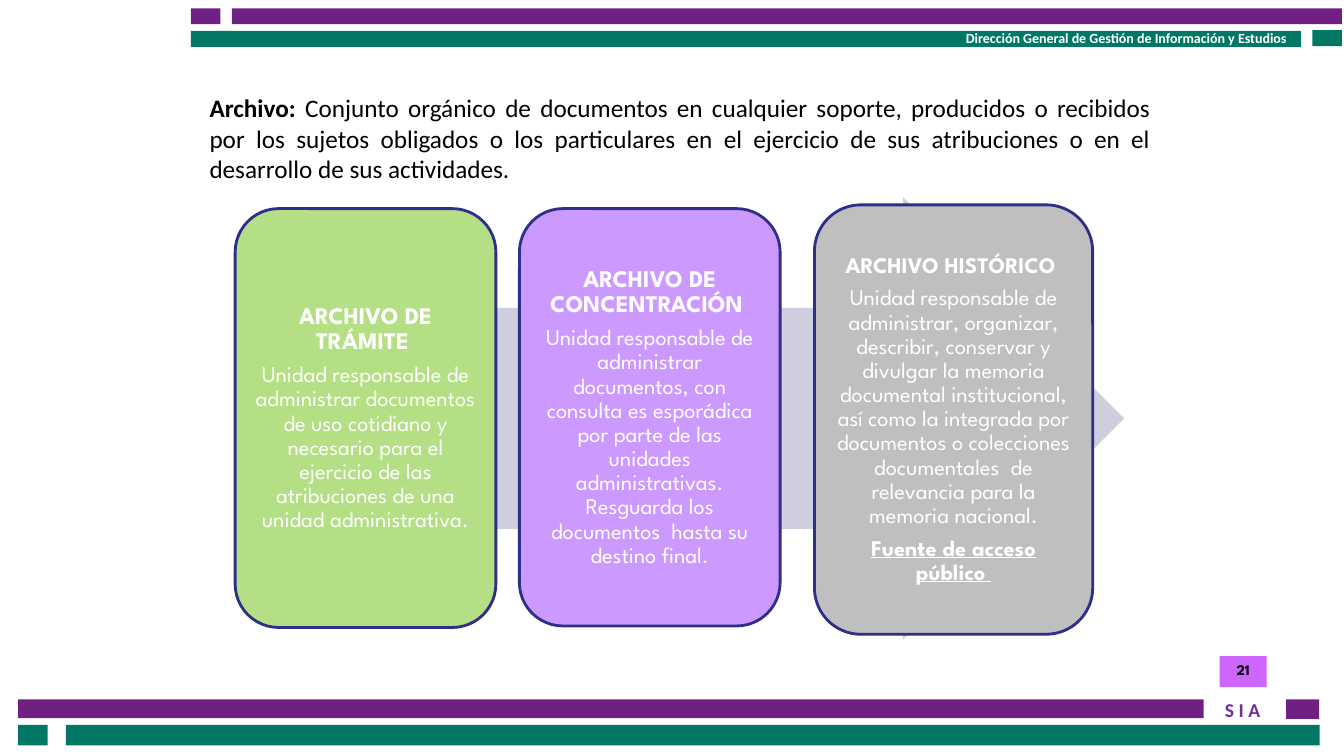
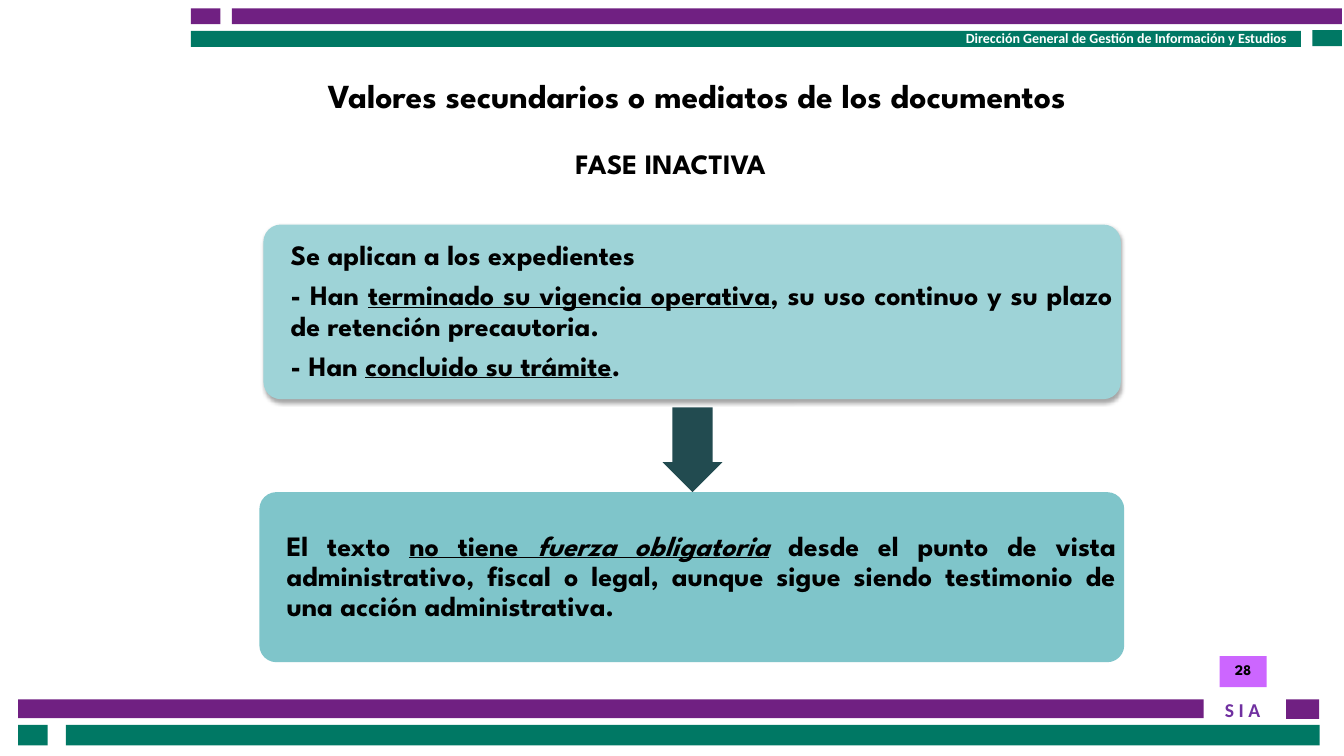
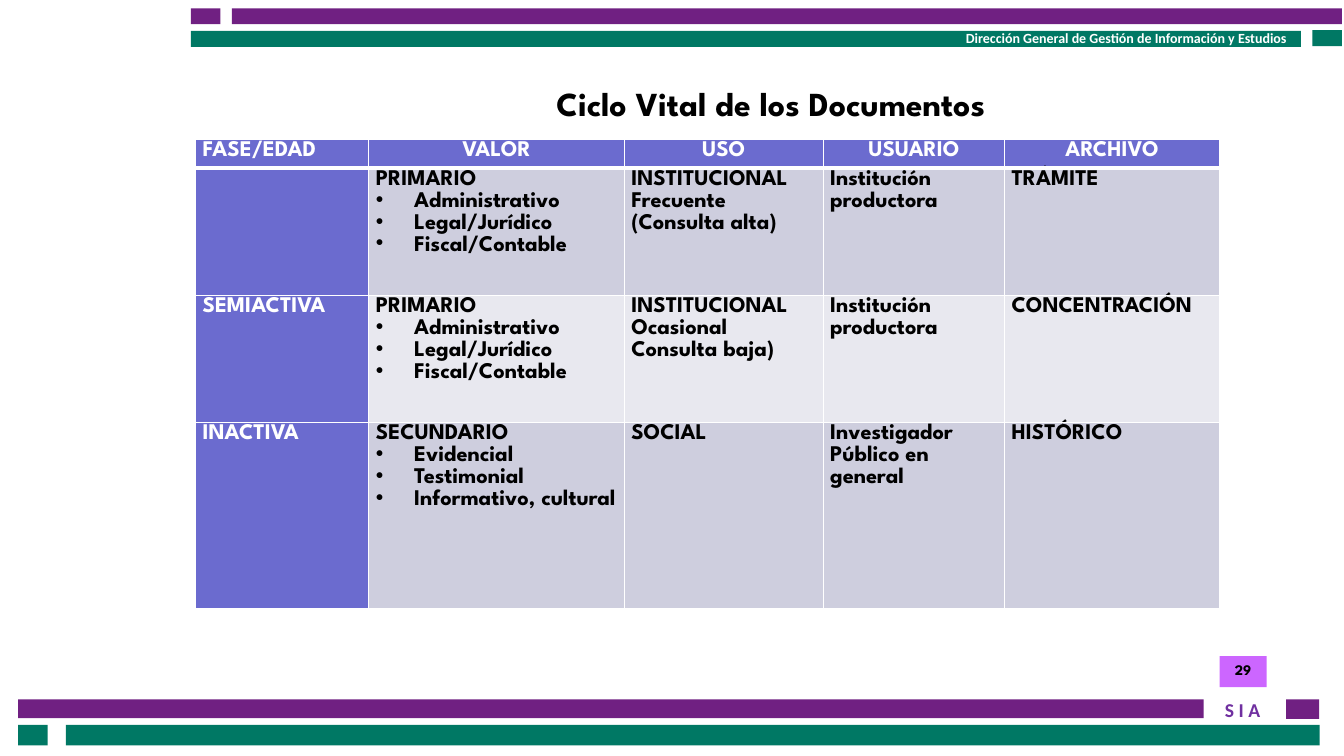
from lxml.etree import SubElement
from pptx import Presentation
from pptx.dml.color import RGBColor
from pptx.enum.shapes import MSO_SHAPE
from pptx.enum.text import MSO_ANCHOR, MSO_AUTO_SIZE, PP_ALIGN
from pptx.oxml import parse_xml
from pptx.oxml.ns import nsdecls, qn
from pptx.util import Inches, Pt

COLORS = {
    "purple": "702082", "green": "007864", "violet": "7030A0",
    "badge": "CC66FF", "white": "FFFFFF", "black": "000000",
    "lime": "B4DF85", "lilac": "CC99FF", "gray": "BFBFBF",
    "navy": "2E2E8B", "arrow": "CECEDE", "aqua": "9ED3D7",
    "teal": "72BFC5", "deep": "224B50", "head": "6B6BCF",
    "dark": "CECEDE", "light": "E8E8EF",
}
BANDS = [
    ("purple", 14.2, 1.1, 2.2, 2.1), ("purple", 17.25, 1.1, 82.6, 2.1),
    ("green", 97.65, 4, 2.2, 2.1), ("green", 14.2, 4.1, 82.6, 2.1),
    ("purple", 95.7, 92.5, 2.45, 2.6), ("purple", 1.35, 92.5, 88.2, 2.5),
    ("green", 1.35, 95.9, 2.2, 2.7), ("green", 4.9, 95.9, 93.3, 2.7),
]
SPARTAN, CALIBRI = "League Spartan", "Calibri"
LEFT, MID, RIGHT, FULL = PP_ALIGN.LEFT, PP_ALIGN.CENTER, PP_ALIGN.RIGHT, PP_ALIGN.JUSTIFY
TOP, CENTER = MSO_ANCHOR.TOP, MSO_ANCHOR.MIDDLE
BULLET = "• "


def tint(name):
    return RGBColor.from_string(COLORS[name])


class Deck:
    def __init__(self):
        self.prs = Presentation()
        self.prs.slide_width = Inches(13.33)
        self.prs.slide_height = Inches(7.5)

    def area(self, x, y, w, h):
        wide, high = self.prs.slide_width, self.prs.slide_height
        return [int(part * full / 100) for part, full in
                ((x, wide), (y, high), (w, wide), (h, high))]

    def start(self, number, titled=True):
        layout = self.prs.slide_layouts[5 if titled else 6]
        self.slide = self.prs.slides.add_slide(layout)
        for color, *box in BANDS:
            self.shape(MSO_SHAPE.RECTANGLE, box, color)
        self.text((62.2, 3.2, 34.25, 3.6),
                  ["Dirección General de Gestión de Información y Estudios"],
                  size=10, font=CALIBRI, color="white", align=RIGHT)
        self.text((89.9, 91.6, 5.1, 4.5), ["S I A"],
                  size=14, font=CALIBRI, color="violet", align=MID)
        badge = self.shape(MSO_SHAPE.RECTANGLE, (90.75, 86.8, 3.5, 4.1), "badge")
        self.letter(badge.text_frame, [str(number)], size=10.5, align=MID)

    def title(self, box, text, anchor=TOP, **style):
        holder = self.slide.shapes.title
        holder.left, holder.top, holder.width, holder.height = self.area(*box)
        self.letter(holder.text_frame, [text], size=24, anchor=anchor, **style)

    def shape(self, kind, box, color, line=None, adjust=()):
        shape = self.slide.shapes.add_shape(kind, *self.area(*box))
        shape.shadow.inherit = False
        shape.fill.solid()
        shape.fill.fore_color.rgb = tint(color)
        if line:
            shape.line.color.rgb = tint(line)
            shape.line.width = Pt(2)
        else:
            shape.line.fill.background()
        for index, value in enumerate(adjust):
            shape.adjustments[index] = value
        return shape

    def text(self, box, paras, **style):
        field = self.slide.shapes.add_textbox(*self.area(*box))
        self.letter(field.text_frame, paras, **style)

    def panel(self, box, fill, paras, line=None, adjust=(), inset=0.07, **style):
        panel = self.shape(MSO_SHAPE.ROUNDED_RECTANGLE, box, fill, line, adjust)
        self.letter(panel.text_frame, paras, anchor=CENTER, inset=inset,
                    space=0.9, **style)
        return panel

    def letter(self, frame, paras, anchor=TOP, inset=None, **style):
        frame.word_wrap = True
        frame.auto_size = MSO_AUTO_SIZE.NONE
        frame.vertical_anchor = anchor
        if inset is not None:
            frame.margin_left = frame.margin_right = Inches(inset)
            frame.margin_top = frame.margin_bottom = Inches(inset)
        self.fill(frame, paras, **style)

    def fill(self, frame, paras, size=16, font=SPARTAN, color="black",
             align=LEFT, space=None, after=0, indent=0):
        for index, runs in enumerate(paras):
            para = frame.paragraphs[0] if index == 0 else frame.add_paragraph()
            if isinstance(runs, str):
                runs = [(runs, "b")]
            if runs[0][0].startswith(BULLET):
                runs = [(runs[0][0][len(BULLET):], "b")]
                self.bullet(para)
            elif indent:
                props = para._p.get_or_add_pPr()
                props.set("marL", str(Inches(indent)))
                props.set("indent", "0")
            para.alignment = align
            para.space_before = Pt(0)
            para.space_after = Pt(after)
            if space:
                para.line_spacing = space
            for text, marks, *other in runs:
                run = para.add_run()
                run.text = text
                run.font.size = Pt(other[0] if other else size)
                run.font.name = font
                run.font.color.rgb = tint(color)
                run.font.bold = "b" in marks
                run.font.italic = "i" in marks
                run.font.underline = "u" in marks

    def bullet(self, para):
        props = para._p.get_or_add_pPr()
        props.set("marL", str(Inches(0.38)))
        props.set("indent", str(-Inches(0.38)))
        SubElement(props, qn("a:buChar")).set("char", BULLET.strip())

    def shade(self, shape):
        props = shape._element.spPr
        props.remove(props.find(qn("a:effectLst")))
        props.append(parse_xml(
            f'<a:effectLst {nsdecls("a")}><a:outerShdw blurRad="{Pt(3.1)}" '
            f'dist="{Pt(1.8)}" dir="5400000" rotWithShape="0">'
            f'<a:srgbClr val="{COLORS["black"]}"><a:alpha val="35000"/>'
            '</a:srgbClr></a:outerShdw></a:effectLst>'))

    def fade(self, shape, share):
        color = shape._element.spPr.find(qn("a:solidFill"))[0]
        SubElement(color, qn("a:alpha")).set("val", str(share * 1000))

    def edge(self, cell, head):
        props = cell._tc.get_or_add_tcPr()
        for side in ("lnL", "lnR", "lnT", "lnB"):
            width = Pt(3 if head and side == "lnB" else 1)
            props.append(parse_xml(
                f'<a:{side} {nsdecls("a")} w="{width}"><a:solidFill>'
                f'<a:srgbClr val="{COLORS["white"]}"/></a:solidFill></a:{side}>'))

    def table(self, box, cols, rows, data):
        table = self.slide.shapes.add_table(
            len(rows), len(cols), *self.area(*box)).table
        table.horz_banding = False
        for col, width in zip(table.columns, cols):
            col.width = self.area(0, 0, width, 0)[2]
        for row, height in zip(table.rows, rows):
            row.height = self.area(0, 0, 0, height)[3]
        for down, line in enumerate(data):
            for across, text in enumerate(line):
                cell = table.cell(down, across)
                head = down == 0
                strong = head or across == 0
                self.edge(cell, head)
                cell.fill.solid()
                band = "dark" if down % 2 else "light"
                cell.fill.fore_color.rgb = tint("head" if strong else band)
                cell.margin_left = cell.margin_right = Inches(0.07)
                cell.margin_top = cell.margin_bottom = 0
                if text:
                    self.fill(cell.text_frame, text.split("\n"), space=1.07,
                              color="white" if strong else "black",
                              align=MID if head and across else LEFT)


def archives(deck):
    deck.start(21, titled=False)
    deck.shape(MSO_SHAPE.RIGHT_ARROW, (17.5, 26.1, 66.15, 58.5), "arrow")
    cards = [
        ((17.5, 27.6, 19.4, 55.4), "lime", [
            [("ARCHIVO DE TRÁMITE ", "b", 17)],
            [("Unidad responsable de administrar documentos de uso cotidiano y "
              "necesario para el ejercicio de las atribuciones de una unidad "
              "administrativa.", "")]]),
        ((38.65, 27.6, 19.4, 55.2), "lilac", [
            [("ARCHIVO DE CONCENTRACIÓN ", "b", 17)],
            [("Unidad responsable de administrar documentos, con consulta es "
              "esporádica por parte de las unidades administrativas. Resguarda "
              "los documentos  hasta su destino final.", "")]]),
        ((60.6, 27.1, 20.7, 56.8), "gray", [
            "ARCHIVO HISTÓRICO ",
            [("Unidad responsable de administrar, organizar, describir, "
              "conservar y divulgar la memoria documental institucional, así "
              "como la integrada por documentos o colecciones documentales  de "
              "relevancia para la memoria nacional.", "")],
            [("Fuente de acceso público ", "bu")]]),
    ]
    for box, fill, paras in cards:
        deck.panel(box, fill, paras, line="navy", color="white", align=MID,
                   after=6)
    deck.text((14.85, 11.6, 71.5, 13.4), [[
        ("Archivo: ", "b"),
        ("Conjunto orgánico de documentos en cualquier soporte, producidos o "
         "recibidos por los sujetos obligados o los particulares en el "
         "ejercicio de sus atribuciones o en el desarrollo de sus "
         "actividades.", "")]], size=18, font=CALIBRI, align=FULL)


def values(deck):
    deck.start(28)
    deck.title((18.1, 9.2, 67.5, 9.5),
               "Valores secundarios o mediatos de los documentos", align=MID)
    deck.text((34.1, 18.7, 31.6, 5.9), ["FASE INACTIVA"], size=20, align=MID)
    style = dict(adjust=[0.1], inset=0.03, size=20, align=FULL, after=7,
                 indent=0.19)
    cause = deck.panel((19.6, 29.7, 63.8, 23.1), "aqua", [
        "Se aplican a los expedientes ",
        [("- Han ", "b"), ("terminado su vigencia operativa", "bu"),
         (", su uso continuo y su plazo de retención precautoria.", "b")],
        [("- Han ", "b"), ("concluido su trámite", "bu"), (".", "b")]], **style)
    deck.shade(cause)
    deck.shape(MSO_SHAPE.DOWN_ARROW, (49.3, 53.9, 4.45, 11.2), "deep",
               adjust=[0.67, 0.5])
    effect = deck.panel((19.3, 65.1, 64.35, 22.5), "teal", [[
        ("El texto ", "b"), ("no tiene ", "bu"), ("fuerza obligatoria", "biu"),
        (" desde el punto de vista administrativo, fiscal o legal, aunque "
         "sigue siendo testimonio de una acción administrativa.", "b")]], **style)
    deck.fade(effect, 90)


def cycle(deck):
    deck.start(29)
    deck.title((35.85, 9.1, 38.2, 6.4), "Ciclo Vital de los Documentos",
               anchor=CENTER, align=RIGHT, space=1.5)
    first = "PRIMARIO\n• Administrativo\n• Legal/Jurídico\n• Fiscal/Contable"
    maker = "Institución productora"
    deck.table(
        (14.55, 18.5, 76.2, 62), [12.9, 19, 14.8, 13.5, 16],
        [3.75, 16.85, 16.85, 24.55], [
            ["FASE/EDAD", "VALOR", "USO", "USUARIO", "ARCHIVO"],
            ["", first, "INSTITUCIONAL\nFrecuente\n(Consulta alta)", maker,
             "TRÁMITE"],
            ["SEMIACTIVA", first, "INSTITUCIONAL\nOcasional\nConsulta baja)",
             maker, "CONCENTRACIÓN"],
            ["INACTIVA",
             "SECUNDARIO\n• Evidencial\n• Testimonial\n• Informativo, cultural",
             "SOCIAL", "Investigador\nPúblico en general", "HISTÓRICO"]])


def main():
    deck = Deck()
    for build in (archives, values, cycle):
        build(deck)
    deck.prs.save("out.pptx")


if __name__ == "__main__":
    main()
